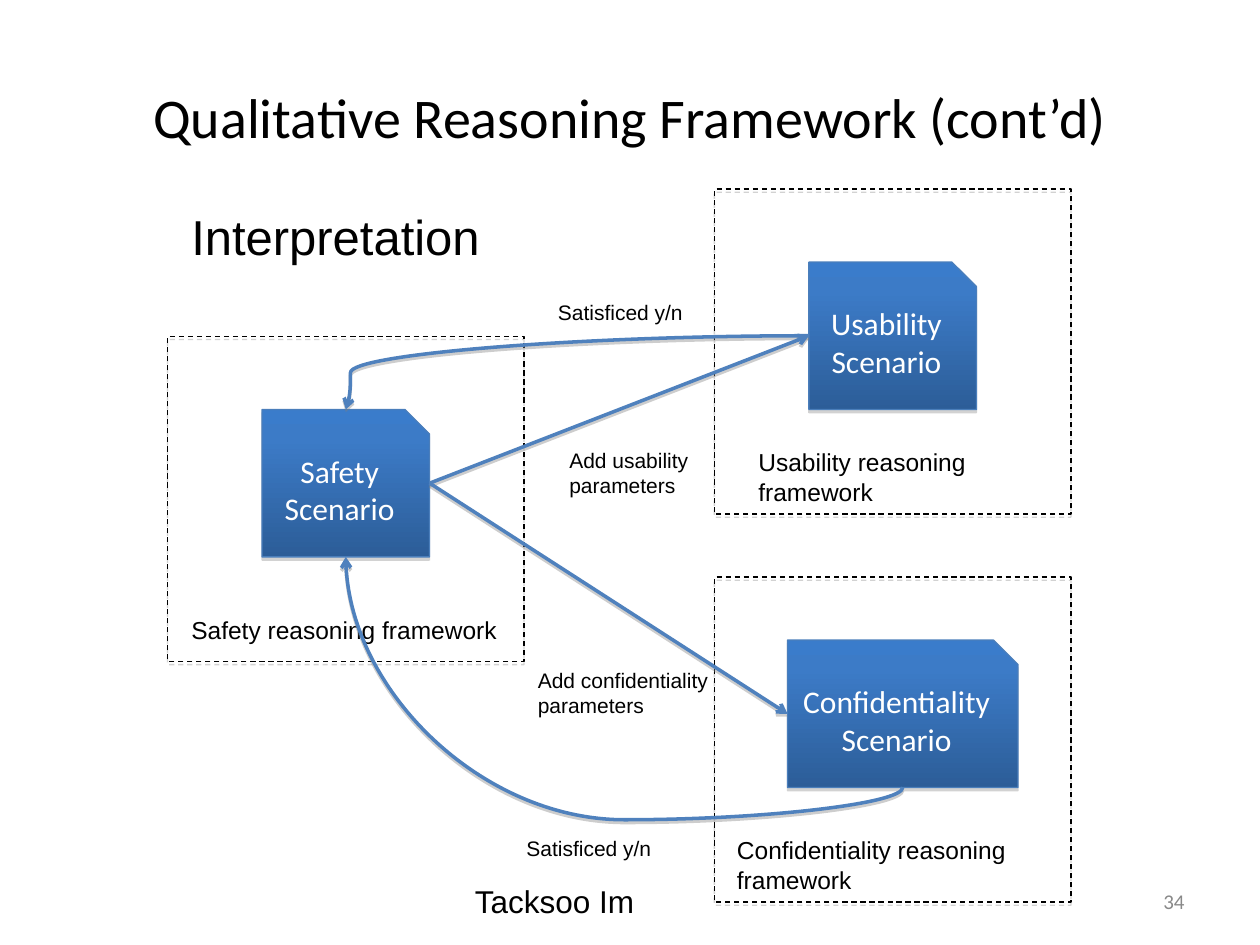
from dataclasses import dataclass

from lxml import etree
from copy import deepcopy
from pptx import Presentation
from pptx.dml.color import RGBColor
from pptx.enum.dml import MSO_LINE
from pptx.enum.shapes import MSO_CONNECTOR, MSO_SHAPE
from pptx.enum.text import MSO_ANCHOR, PP_ALIGN
from pptx.oxml.ns import qn
from pptx.util import Inches, Pt

LEFT, CENTER, RIGHT = PP_ALIGN.LEFT, PP_ALIGN.CENTER, PP_ALIGN.RIGHT
TOP, MIDDLE = MSO_ANCHOR.TOP, MSO_ANCHOR.MIDDLE
STRAIGHT, CURVE = MSO_CONNECTOR.STRAIGHT, MSO_CONNECTOR.CURVE
RECTANGLE, SNIPPED = MSO_SHAPE.RECTANGLE, MSO_SHAPE.SNIP_1_RECTANGLE
DASH = MSO_LINE.DASH
SITE_TOP, SITE_LEFT, SITE_BOTTOM, SITE_RIGHT = range(4)
TITLE_ONLY = 5


@dataclass(frozen=True)
class Theme:
    heading_font: str = "Calibri"
    body_font: str = "Arial"
    black: str = "000000"
    white: str = "FFFFFF"
    grey: str = "898989"
    shadow: str = "808080"
    card_edge: str = "4A7EBB"
    arrow: str = "4F81BD"
    card_gradient: tuple = ((0, "3A7CCB"), (0.2, "3C7BC7"), (1, "2C5D98"))
    title: int = 32
    subtitle: int = 28
    scenario: int = 18
    caption: int = 14
    label: int = 12


@dataclass(frozen=True)
class Framework:
    """A dashed frame, its scenario card and its caption."""
    name: str
    frame: tuple
    card: tuple
    caption: tuple


@dataclass(frozen=True)
class Label:
    text: str
    box: tuple
    size: int
    wrap: bool = True


THEME = Theme()
FRAME_SIZE = (2.83, 2.58)
CARD_HEIGHT = 1.17

FRAMEWORKS = (
    Framework("Safety", (1.33, 2.67), (2.08, 3.25, 1.33), (1.42, 4.83, 2.75, 0.34)),
    Framework("Usability", (5.67, 1.5), (6.42, 2.08, 1.33), (5.92, 3.5, 2.75, 0.57)),
    Framework("Confidentiality", (5.67, 4.58), (6.25, 5.08, 1.83), (5.75, 6.58, 2.75, 0.57)),
)

LABELS = (
    Label("Satisficed y/n", (4.33, 2.33, 1.25, 0.3), THEME.label),
    Label("Satisficed y/n", (4.08, 6.58, 1.25, 0.3), THEME.label),
    Label("Add usability parameters", (4.42, 3.5, 1.25, 0.51), THEME.label),
    Label("Add confidentiality parameters", (4.17, 5.25, 1.67, 0.51), THEME.label),
    Label("Interpretation", (1.42, 1.59, 2.58, 0.57), THEME.subtitle),
    Label("Tacksoo Im", (3.67, 6.95, 1.48, 0.4), THEME.scenario, wrap=False),
)


def inches(values: tuple) -> list:
    return [Inches(value) for value in values]


def rgb(color: str) -> RGBColor:
    return RGBColor.from_string(color)


def write(shape, text: str, *, size: int, font: str = THEME.body_font,
          color: str = THEME.black, align=LEFT, anchor=TOP, wrap: bool = True) -> None:
    """Fill a shape with text, one paragraph per line."""
    frame = shape.text_frame
    frame.word_wrap = wrap
    frame.vertical_anchor = anchor
    frame.text = text
    for paragraph in frame.paragraphs:
        paragraph.alignment = align
        for run in paragraph.runs:
            run.font.size = Pt(size)
            run.font.name = font
            run.font.color.rgb = rgb(color)


def add_text(slide, text: str, box: tuple, **style) -> None:
    write(slide.shapes.add_textbox(*inches(box)), text, **style)


def add_shadow(shape, distance: int, opacity: int) -> None:
    """Replace the theme's effects with a sharp shadow straight below."""
    properties = shape._element.spPr
    effects = properties.find(qn("a:effectLst"))
    if effects is None:
        effects = etree.SubElement(properties, qn("a:effectLst"))
    outer = etree.SubElement(effects, qn("a:outerShdw"), blurRad="0",
                             dist=str(distance), dir="5400000", rotWithShape="0")
    color = etree.SubElement(outer, qn("a:srgbClr"), val=THEME.shadow)
    etree.SubElement(color, qn("a:alpha"), val=str(opacity * 1000))


def fill_gradient(shape, stops: tuple) -> None:
    shape.fill.gradient()
    shape.fill.gradient_angle = 270
    stop_list = shape._element.spPr.find(".//" + qn("a:gsLst"))
    while len(stop_list) < len(stops):
        stop_list.append(deepcopy(stop_list[0]))
    for stop, (position, color) in zip(shape.fill.gradient_stops, stops):
        stop.position = position
        stop.color.rgb = rgb(color)


def add_box(slide, kind, box: tuple, edge: str):
    shape = slide.shapes.add_shape(kind, *inches(box))
    shape.line.color.rgb = rgb(edge)
    shape.line.width = Pt(0.75)
    shape.shadow.inherit = False
    add_shadow(shape, Pt(1.8), 35)
    return shape


def add_framework(slide, item: Framework):
    """Draw one framework and return its scenario card."""
    frame = add_box(slide, RECTANGLE, item.frame + FRAME_SIZE, THEME.black)
    frame.fill.background()
    frame.line.dash_style = DASH
    card = add_box(slide, SNIPPED, item.card + (CARD_HEIGHT,), THEME.card_edge)
    fill_gradient(card, THEME.card_gradient)
    write(card, f"{item.name}\nScenario", size=THEME.scenario, font=THEME.heading_font,
          color=THEME.white, align=CENTER, anchor=MIDDLE)
    add_text(slide, f"{item.name} reasoning framework", item.caption, size=THEME.caption)
    return card


def add_arrow(slide, kind, source, source_site: int, target, target_site: int):
    arrow = slide.shapes.add_connector(kind, 0, 0, 0, 0)
    arrow.begin_connect(source, source_site)
    arrow.end_connect(target, target_site)
    arrow.line.color.rgb = rgb(THEME.arrow)
    arrow.line.width = Pt(2)
    etree.SubElement(arrow.line._get_or_add_ln(), qn("a:tailEnd"), type="arrow")
    add_shadow(arrow, Pt(1.6), 38)
    return arrow


def bend(arrow, adjustment: float) -> None:
    """Place the middle of a curve, as a share of its run."""
    geometry = arrow._element.spPr.find(qn("a:prstGeom"))
    guides = geometry.find(qn("a:avLst"))
    if guides is None:
        guides = etree.SubElement(geometry, qn("a:avLst"))
    etree.SubElement(guides, qn("a:gd"), name="adj1", fmla=f"val {round(adjustment * 100000)}")


def turn_upright(arrow) -> None:
    """Let a curve running up and left leave its source vertically."""
    left, top, width, height = arrow.left, arrow.top, arrow.width, arrow.height
    arrow.left, arrow.top = left + (width - height) // 2, top + (height - width) // 2
    arrow.width, arrow.height = height, width
    transform = arrow._element.spPr.find(qn("a:xfrm"))
    transform.attrib.pop("flipV", None)
    transform.set("flipH", "1")
    transform.set("rot", "5400000")


def main() -> None:
    deck = Presentation()
    deck.slide_width, deck.slide_height = Inches(10), Inches(7.5)
    slide = deck.slides.add_slide(deck.slide_layouts[TITLE_ONLY])

    # Title and slide number
    title = slide.shapes.title
    title.left, title.top, title.width, title.height = inches((0.5, 0.3, 9, 1.25))
    write(title, "Qualitative Reasoning Framework (cont’d)", size=THEME.title,
          font=THEME.heading_font, align=CENTER, anchor=MIDDLE)
    add_text(slide, "34", (7.17, 6.95, 2.33, 0.4), size=THEME.label,
             font=THEME.heading_font, color=THEME.grey, align=RIGHT, anchor=MIDDLE)

    # Frameworks
    safety, usability, confidentiality = [add_framework(slide, item) for item in FRAMEWORKS]

    # Parameters go out from safety, answers come back
    usability_answer = add_arrow(slide, CURVE, usability, SITE_LEFT, safety, SITE_TOP)
    bend(usability_answer, 0.99)
    for scenario in (usability, confidentiality):
        add_arrow(slide, STRAIGHT, safety, SITE_RIGHT, scenario, SITE_LEFT)
    confidentiality_answer = add_arrow(slide, CURVE, confidentiality, SITE_BOTTOM,
                                       safety, SITE_BOTTOM)
    turn_upright(confidentiality_answer)
    bend(confidentiality_answer, -0.14)

    # Labels
    for label in LABELS:
        add_text(slide, label.text, label.box, size=label.size, wrap=label.wrap)

    deck.save("out.pptx")


if __name__ == "__main__":
    main()
